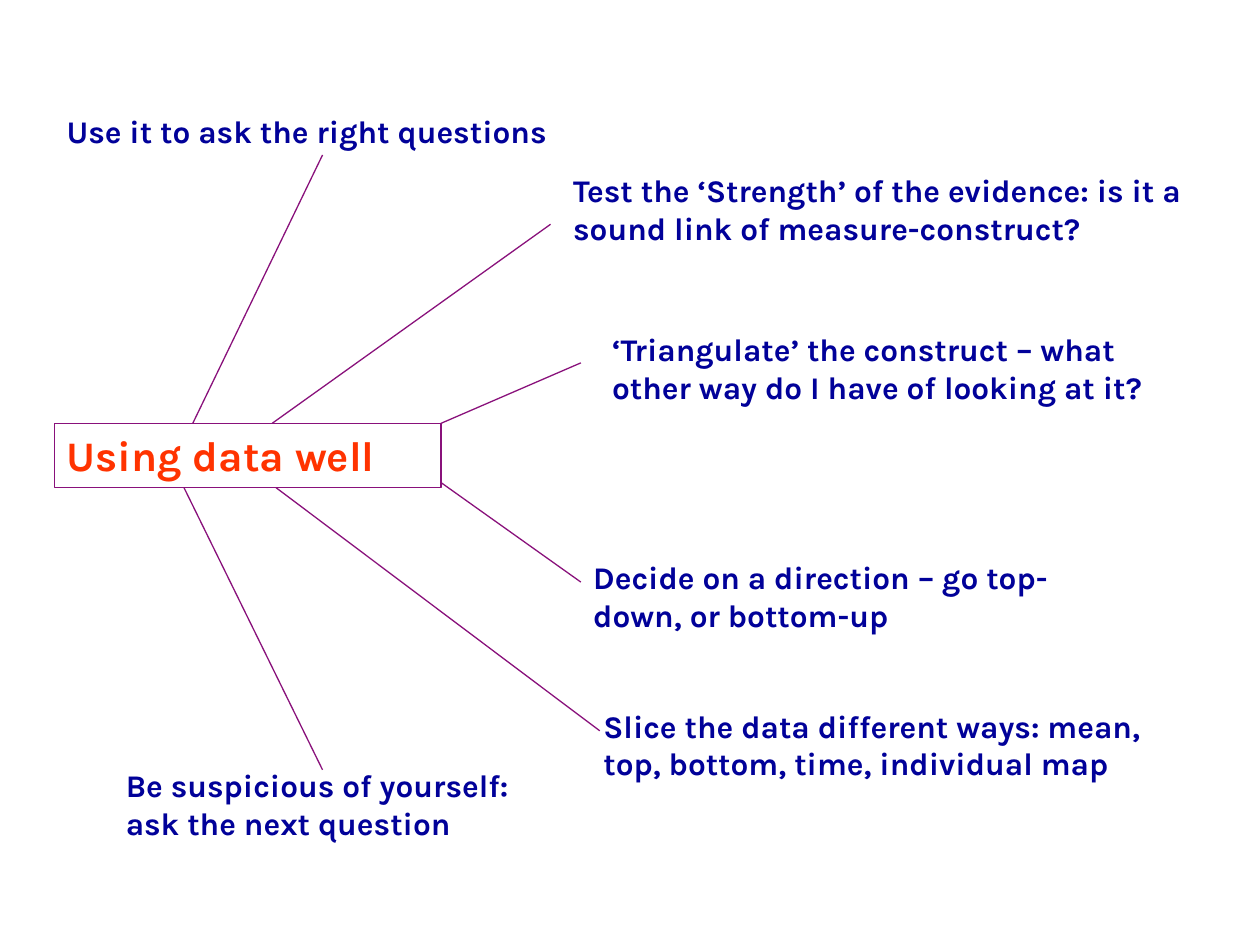
from lxml import etree
from pptx import Presentation
from pptx.dml.color import RGBColor
from pptx.enum.shapes import MSO_CONNECTOR
from pptx.enum.text import MSO_ANCHOR, MSO_AUTO_SIZE, PP_ALIGN
from pptx.oxml.ns import qn
from pptx.util import Inches, Pt

STRAIGHT = MSO_CONNECTOR.STRAIGHT
TOP = MSO_ANCHOR.TOP
NO_FIT = MSO_AUTO_SIZE.NONE
LEFT = PP_ALIGN.LEFT

TITLE_ONLY = 5
FONT = "Karla"
PURPLE, ORANGE, NAVY = "89117B", "FF3300", "010199"

HUB_BOX = (0.43, 3.36, 3.07, 0.51)
BRANCHES = [
    ("Use it to ask the right questions",
     (0.43, 0.84, 4.2, 0.4), (1.53, 3.36), (2.56, 1.23)),
    ("Test the ‘Strength’ of the evidence: is it a sound link of measure-construct?",
     (4.45, 1.31, 5.12, 0.7), (2.16, 3.36), (4.37, 1.78)),
    ("‘Triangulate’ the construct – what other way do I have of looking at it?",
     (4.76, 2.57, 4.49, 1), (3.5, 3.36), (4.61, 2.88)),
    ("Decide on a direction – go top-down, or bottom-up",
     (4.61, 4.38, 4.49, 0.7), (3.5, 3.83), (4.61, 4.62)),
    ("Slice the data different ways: mean, top, bottom, time, individual map",
     (4.69, 5.56, 4.49, 1), (2.19, 3.87), (4.76, 5.8)),
    ("Be suspicious of yourself: ask the next question",
     (0.9, 6.03, 3.7, 0.7), (1.46, 3.87), (2.56, 6.11)),
]


def color(hex_string):
    """Return the colour for a hex string."""
    return RGBColor.from_string(hex_string)


def write_text(shape, text, size, fill, bold=True, align=LEFT):
    """Write one formatted paragraph at the top of a shape."""
    frame = shape.text_frame
    frame.word_wrap = True
    frame.auto_size = NO_FIT
    frame.vertical_anchor = TOP
    para = frame.paragraphs[0]
    para.alignment = align
    span = para.add_run()
    span.text = text
    span.font.name = FONT
    span.font.size = Pt(size)
    span.font.bold = bold
    span.font.color.rgb = color(fill)


def style_line(line):
    """Give a line the diagram's thin purple stroke."""
    line.color.rgb = color(PURPLE)
    line.width = Pt(0.75)


def add_hub(page, box):
    """Place the title as the framed centre of the diagram."""
    hub = page.shapes.title
    hub.left, hub.top, hub.width, hub.height = map(Inches, box)
    style_line(hub.line)
    write_text(hub, "Using data well", size=24, fill=ORANGE)


def add_branch(page, text, box, start, end):
    """Place one idea and the spoke that leads to it from the hub."""
    spoke = page.shapes.add_connector(STRAIGHT, *map(Inches, start + end))
    style_line(spoke.line)
    etree.SubElement(spoke._element.spPr, qn("a:effectLst"))
    idea = page.shapes.add_textbox(*map(Inches, box))
    write_text(idea, text, size=18, fill=NAVY)


def main():
    """Build the slide and save the deck."""
    deck = Presentation()
    deck.slide_width, deck.slide_height = Inches(10), Inches(7.5)
    page = deck.slides.add_slide(deck.slide_layouts[TITLE_ONLY])
    add_hub(page, HUB_BOX)
    for branch in BRANCHES:
        add_branch(page, *branch)
    deck.save("out.pptx")


if __name__ == "__main__":
    main()
